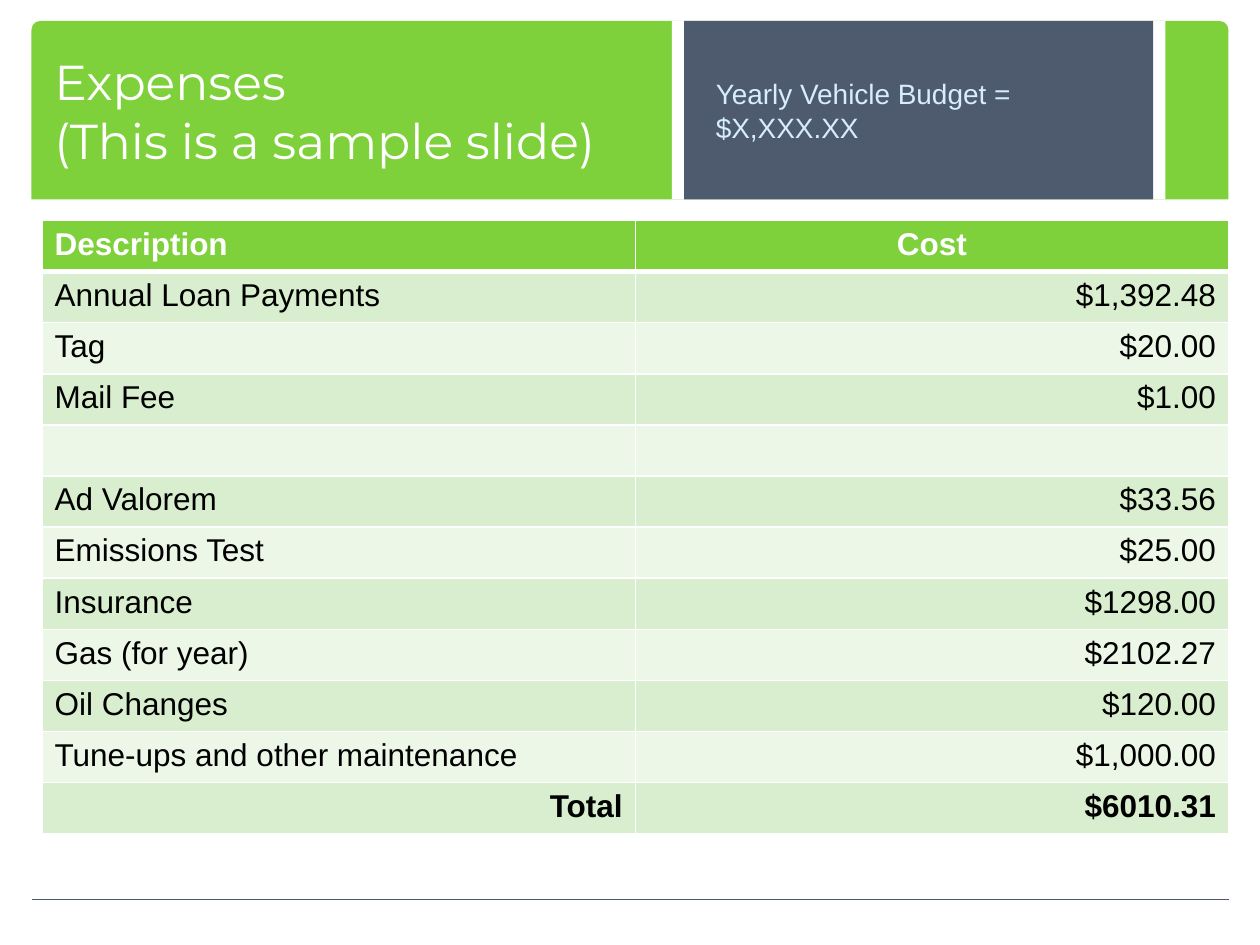
from lxml.etree import SubElement
from pptx import Presentation
from pptx.dml.color import RGBColor
from pptx.enum.shapes import MSO_CONNECTOR as Connector, MSO_SHAPE as Shape
from pptx.enum.text import MSO_ANCHOR as Anchor, PP_ALIGN as Align
from pptx.oxml.ns import qn
from pptx.util import Pt

COLORS = {
    "green": "7FD13B",
    "slate": "4E5B6F",
    "white": "FFFFFF",
    "black": "000000",
    "pale blue": "D6ECFF",
    "dark band": "D8EECE",
    "light band": "ECF7E8",
}

EXPENSES = [
    ("Annual Loan Payments", "$1,392.48"),
    ("Tag", "$20.00"),
    ("Mail Fee", "$1.00"),
    ("", ""),
    ("Ad Valorem", "$33.56"),
    ("Emissions Test", "$25.00"),
    ("Insurance", "$1298.00"),
    ("Gas (for year)", "$2102.27"),
    ("Oil Changes", "$120.00"),
    ("Tune-ups and other maintenance", "$1,000.00"),
]


def color(name):
    return RGBColor.from_string(COLORS[name])


class SlideBuilder:
    """Holds the text style and the slide being filled; lengths are in points."""

    body_font = "Arial"
    title_font = "Montserrat"
    table_size = 18

    def __init__(self, slide):
        self.slide = slide

    def block(self, kind, left, top, width, height, fill):
        shape = self.slide.shapes.add_shape(
            kind, Pt(left), Pt(top), Pt(width), Pt(height))
        shape.shadow.inherit = False
        shape.fill.solid()
        shape.fill.fore_color.rgb = color(fill)
        shape.line.fill.background()
        return shape

    def rule(self, left, right, y, line_color):
        line = self.slide.shapes.add_connector(
            Connector.STRAIGHT, Pt(left), Pt(y), Pt(right), Pt(y))
        line.line.color.rgb = color(line_color)
        line.line.width = Pt(1)
        SubElement(line._element.spPr, qn("a:effectLst"))

    def format_runs(self, paragraph, font, size, text_color, bold=False):
        for run in paragraph.runs:
            run.font.name = font
            run.font.size = Pt(size)
            run.font.bold = bold
            run.font.color.rgb = color(text_color)

    def text(self, text, left, top, width, height, font, size, text_color):
        box = self.slide.shapes.add_textbox(
            Pt(left), Pt(top), Pt(width), Pt(height))
        frame = box.text_frame
        frame.word_wrap = True
        frame.vertical_anchor = Anchor.MIDDLE
        paragraph = frame.paragraphs[0]
        paragraph.text = text
        self.format_runs(paragraph, font, size, text_color)

    def cell(self, cell, text, align, fill, text_color, bold, borders):
        """Fill one table cell; borders maps a side (L, R, T, B) to a width."""
        properties = cell._tc.get_or_add_tcPr()
        for side, width in borders.items():
            line = SubElement(properties, qn(f"a:ln{side}"), w=str(Pt(width)))
            line_fill = SubElement(line, qn("a:solidFill"))
            SubElement(line_fill, qn("a:srgbClr"), val=COLORS["white"])
        cell.fill.solid()
        cell.fill.fore_color.rgb = color(fill)
        paragraph = cell.text_frame.paragraphs[0]
        paragraph.text = text
        paragraph.alignment = align
        paragraph.font.size = Pt(self.table_size)
        self.format_runs(paragraph, self.body_font, self.table_size,
                         text_color, bold)

    def table(self, rows, left, top, width, height):
        """Draw a two-column table with a header first and a total last."""
        table = self.slide.shapes.add_table(
            len(rows), 2, Pt(left), Pt(top), Pt(width), Pt(height)).table
        for row in table.rows:
            row.height = Pt(height / len(rows))
        last = len(rows) - 1
        for index, values in enumerate(rows):
            header, total = index == 0, index == last
            if header:
                fill, aligns = "green", (Align.LEFT, Align.CENTER)
            else:
                fill = "dark band" if index % 2 else "light band"
                aligns = (Align.RIGHT if total else Align.LEFT, Align.RIGHT)
            borders = {"L": 1, "R": 1, "T": 3 if index == 1 else 1,
                       "B": 3 if header else 1}
            for column, (value, align) in enumerate(zip(values, aligns)):
                self.cell(table.cell(index, column), value, align, fill,
                          "white" if header else "black",
                          header or total, borders)


def main():
    presentation = Presentation()
    presentation.slide_width, presentation.slide_height = Pt(720), Pt(540)
    slide = presentation.slides.add_slide(presentation.slide_layouts[6])
    builder = SlideBuilder(slide)

    banner_top, banner_height = 12, 102
    banner = builder.block(Shape.ROUND_2_SAME_RECTANGLE, 18, banner_top,
                           684, banner_height, "green")
    banner.adjustments[0] = 0.05
    banner.adjustments[1] = 0
    builder.rule(18, 702, 514, "slate")
    for left, width, fill in ((384, 282, "white"), (391, 268, "slate")):
        builder.block(Shape.RECTANGLE, left, banner_top, width,
                      banner_height, fill)

    builder.text("Expenses\v(This is a sample slide)", 24, 18, 378, 90,
                 builder.title_font, 28, "white")
    rows = [("Description", "Cost"), *EXPENSES, ("Total", "$6010.31")]
    builder.table(rows, 24, 126, 678, 350.4)
    builder.text("Yearly Vehicle Budget = $X,XXX.XX", 402, 18, 252, 90,
                 builder.body_font, 16, "pale blue")

    presentation.save("out.pptx")


if __name__ == "__main__":
    main()
